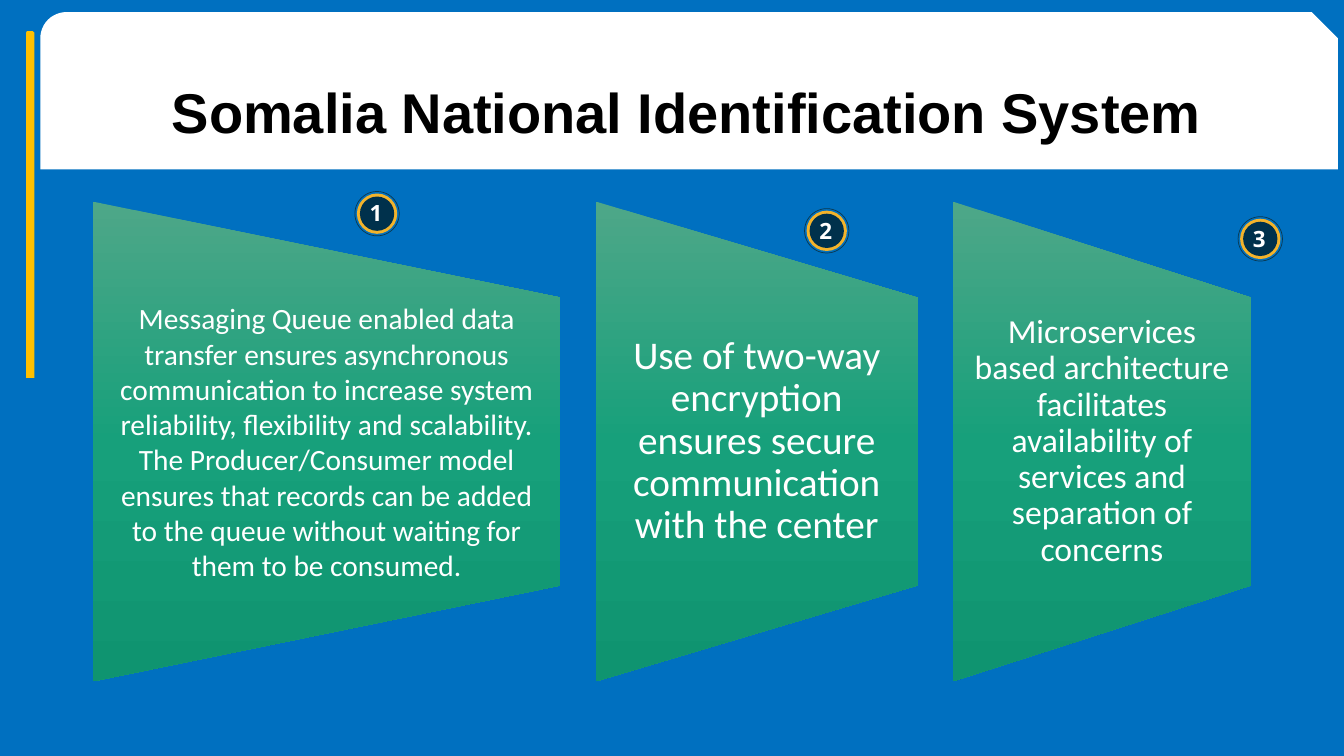
from lxml import etree
from pptx import Presentation
from pptx.dml.color import RGBColor
from pptx.enum.shapes import MSO_SHAPE as Kind
from pptx.enum.text import MSO_ANCHOR as Anchor, PP_ALIGN as Align
from pptx.oxml.ns import qn
from pptx.util import Inches, Pt

# Content
TITLE = "Somalia National Identification System"
# text, width, side inset, font size, line spacing
PANELS = [
    ("Messaging Queue enabled data transfer ensures asynchronous communication "
     "to increase system reliability, flexibility and scalability. The "
     "Producer/Consumer model ensures that records can be added to the queue "
     "without waiting for them to be consumed.", 4.64, 0.15, 21, None),
    ("Use of two-way encryption ensures secure communication with the center",
     3.19, 0.19, 28, 0.9),
    ("Microservices based architecture facilitates availability of services "
     "and separation of concerns", 2.96, 0.17, 24, 0.9),
]
BADGES = [("1", 3.74, 2.12), ("2", 8.2, 2.29), ("3", 12.5, 2.37)]  # centres
DISCS = [(0.4, "F3B32B"), (0.34, "00314C")]
STOPS = [(0, "4EA788"), (50, "17A07B"), (100, "0F9470")]

# Grid
WIDE, HIGH = 13.33, 7.5
LEFT, TOP, TALL, GAP = 0.92, 2.0, 4.76, 0.35
SLOPE = 0.2  # share of the panel height lost at each slanted edge
RING = 0.44


def color(code):
    return RGBColor.from_string(code)


def shape(kind, x, y, w, h, fill=None):
    item = slide.shapes.add_shape(kind, *map(Inches, (x, y, w, h)))
    item.shadow.inherit = False
    item.line.fill.background()
    if fill:
        item.fill.solid()
        item.fill.fore_color.rgb = color(fill)
    else:
        item.fill.background()
    return item


def write(item, text, size, font, ink, bold, insets, anchor, space=None):
    frame = item.text_frame
    frame.word_wrap = True
    frame.vertical_anchor = anchor
    side, top, base = map(Inches, insets)
    frame.margin_left = frame.margin_right = side
    frame.margin_top, frame.margin_bottom = top, base
    para = frame.paragraphs[0]
    para.text = text
    para.alignment = Align.CENTER
    if space:
        para.line_spacing = space
    para.font.size, para.font.name, para.font.bold = Pt(size), font, bold
    para.font.color.rgb = color(ink)


def label(x, y, w, h, *style):
    box = slide.shapes.add_textbox(*map(Inches, (x, y, w, h)))
    write(box, *style)


def shade(item):
    """Vertical gradient that stays upright when the shape is turned."""
    item.fill.gradient()
    item.fill.gradient_angle = 270
    grad = item.element.spPr.find(qn("a:gradFill"))
    grad.set("rotWithShape", "0")
    stops = grad.find(qn("a:gsLst"))
    for old in list(stops):
        stops.remove(old)
    for share, code in STOPS:
        stop = etree.SubElement(stops, qn("a:gs"), pos=str(share * 1000))
        etree.SubElement(stop, qn("a:srgbClr"), val=code)


def panel(x, text, w, side, size, space):
    # Turned a quarter, so width and height swap around the same centre
    form = shape(Kind.FLOWCHART_MANUAL_OPERATION,
                 x + (w - TALL) / 2, TOP + (TALL - w) / 2, TALL, w)
    form.rotation = 270
    shade(form)
    label(x, TOP + SLOPE * TALL, w, (1 - 2 * SLOPE) * TALL, text, size,
          "Calibri", "FFFFFF", False, (side, 0, 0), Anchor.MIDDLE, space)


def badge(text, x, y):
    def disc(size, fill=None):
        return shape(Kind.OVAL, x - size / 2, y - size / 2, size, size, fill)

    for size, fill in DISCS:
        disc(size, fill)
    edge = disc(RING).line
    edge.color.rgb = color("0A384F")
    edge.width = Pt(0.5)
    label(x - RING / 2, y - 0.17, 0.42, RING, text, 16, "Open Sans",
          "FFFFFF", True, (0.07, 0.03, 0.03), Anchor.TOP)


deck = Presentation()
deck.slide_width, deck.slide_height = Inches(WIDE), Inches(HIGH)
slide = deck.slides.add_slide(deck.slide_layouts[6])
slide.background.fill.solid()
slide.background.fill.fore_color.rgb = color("0070C0")

# Accent bar and title banner
shape(Kind.SNIP_ROUND_RECTANGLE, 0.26, 0.31, 0.08, 3.44, "FFC000")
banner = shape(Kind.SNIP_ROUND_RECTANGLE, 0.4, 0.12, 12.87, 1.56, "FFFFFF")
write(banner, TITLE, 40, "Arial", "000000", True, (0.1, 0.57, 0.05), Anchor.TOP)

# Panels from left to right
x = LEFT
for text, w, *style in PANELS:
    panel(x, text, w, *style)
    x += w + GAP

# Numbered badges
for item in BADGES:
    badge(*item)

deck.save("out.pptx")
